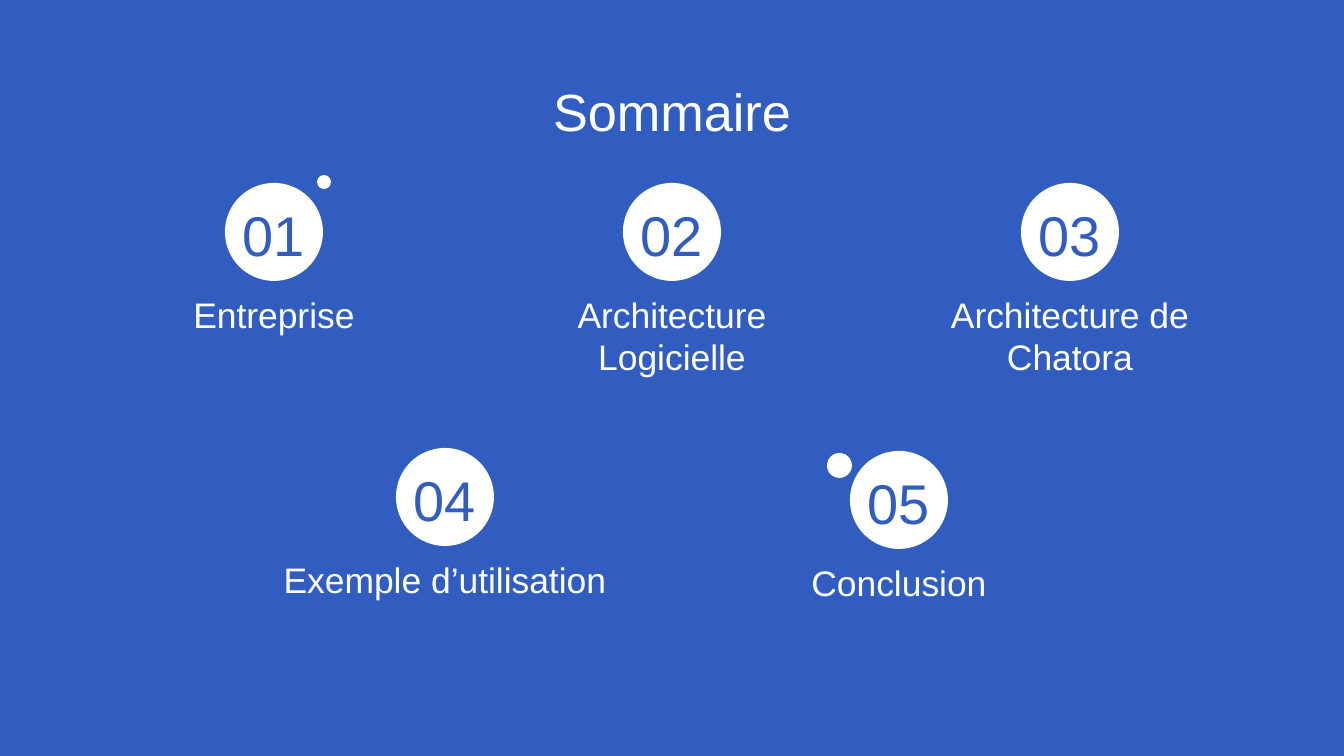
from dataclasses import dataclass

from pptx import Presentation
from pptx.dml.color import RGBColor
from pptx.enum.shapes import MSO_SHAPE as Shape
from pptx.enum.text import MSO_ANCHOR as Anchor, PP_ALIGN as Align
from pptx.util import Pt

EMU_PER_PX = 914400 / 134.4
SLIDE_WIDTH, SLIDE_HEIGHT = 1344, 756
CENTER = SLIDE_WIDTH // 2
COLUMN_STEP = 398
BADGE_SIZE = 98
LABEL_WIDTH, LABEL_HEIGHT = 356, 62
INSET = 13


@dataclass(frozen=True)
class Theme:
    blue: RGBColor = RGBColor(0x30, 0x5D, 0xBF)
    white: RGBColor = RGBColor(0xFF, 0xFF, 0xFF)
    font: str = "Arial"
    title_size: int = 28
    number_size: int = 30
    label_size: int = 19


THEME = Theme()

# Badge centre x, badge top y, label
SECTIONS = [
    (CENTER - COLUMN_STEP, 183, "Entreprise"),
    (CENTER, 183, "Architecture Logicielle"),
    (CENTER + COLUMN_STEP, 183, "Architecture de Chatora"),
    (445, 448, "Exemple d’utilisation"),
    (899, 451, "Conclusion"),
]

# Left, top, diameter
ACCENT_DOTS = [(317, 175, 14), (827, 453, 25)]


def px(*lengths):
    return [round(length * EMU_PER_PX) for length in lengths]


def add_circle(slide, left, top, diameter):
    circle = slide.shapes.add_shape(Shape.OVAL, *px(left, top, diameter, diameter))
    circle.shadow.inherit = False
    circle.fill.solid()
    circle.fill.fore_color.rgb = THEME.white
    circle.line.fill.background()


def add_text(slide, text, bounds, size, color, anchor=Anchor.TOP):
    frame = slide.shapes.add_textbox(*px(*bounds)).text_frame
    frame.word_wrap = True
    frame.vertical_anchor = anchor
    (inset,) = px(INSET)
    frame.margin_left = frame.margin_right = inset
    frame.margin_top = frame.margin_bottom = inset
    frame.text = text
    para = frame.paragraphs[0]
    para.alignment = Align.CENTER
    font = para.runs[0].font
    font.name = THEME.font
    font.size = Pt(size)
    font.color.rgb = color


def add_section(slide, number, center_x, top, label):
    """Add a numbered badge with its label centred below."""
    left = center_x - BADGE_SIZE // 2
    add_circle(slide, left, top, BADGE_SIZE)
    add_text(slide, f"{number:02d}", (left, top, BADGE_SIZE, BADGE_SIZE),
             THEME.number_size, THEME.blue, Anchor.BOTTOM)
    label_bounds = (center_x - LABEL_WIDTH // 2, top + BADGE_SIZE - 1,
                    LABEL_WIDTH, LABEL_HEIGHT)
    add_text(slide, label, label_bounds, THEME.label_size, THEME.white)


def main():
    deck = Presentation()
    deck.slide_width, deck.slide_height = px(SLIDE_WIDTH, SLIDE_HEIGHT)
    slide = deck.slides.add_slide(deck.slide_layouts[6])
    slide.background.fill.solid()
    slide.background.fill.fore_color.rgb = THEME.blue

    add_text(slide, "Sommaire", (46, 66, 1252, 84), THEME.title_size, THEME.white)
    for number, section in enumerate(SECTIONS, start=1):
        add_section(slide, number, *section)
    for dot in ACCENT_DOTS:
        add_circle(slide, *dot)

    deck.save("out.pptx")


if __name__ == "__main__":
    main()
